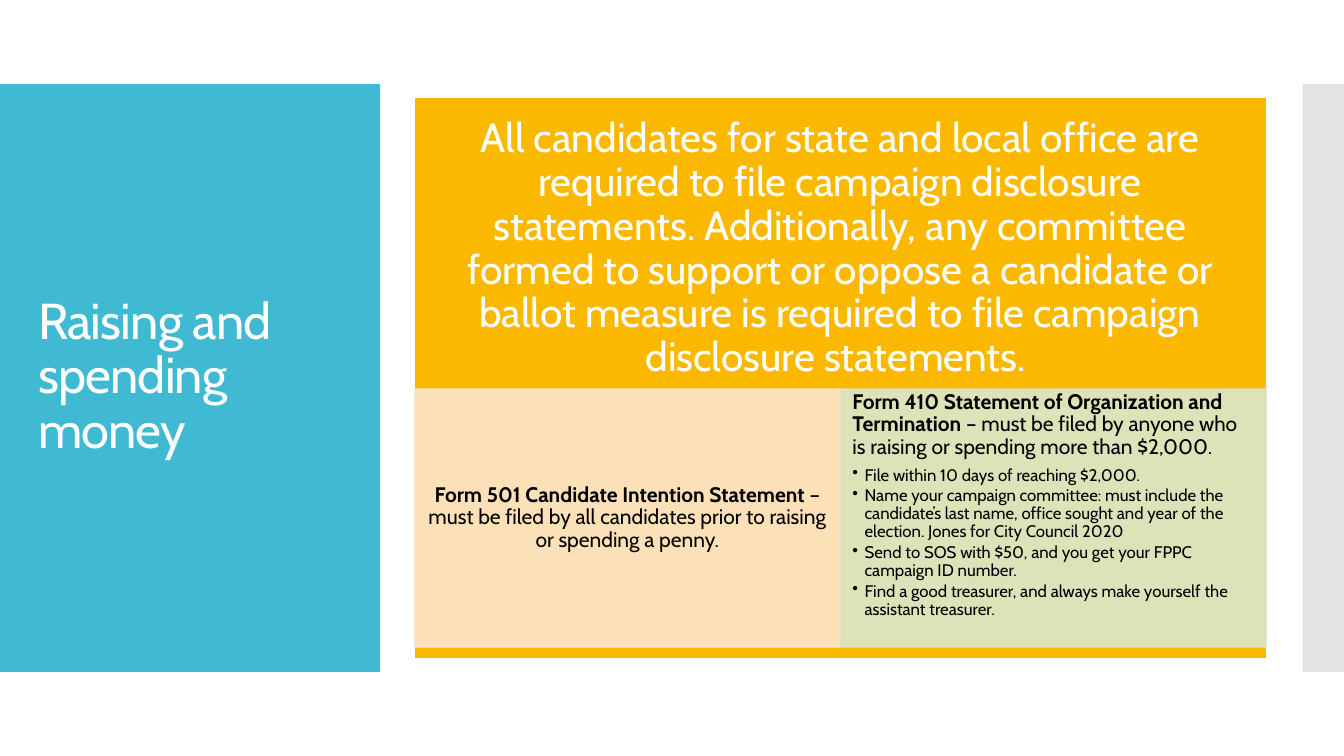
"""Build the slide on raising and spending campaign money."""
from lxml import etree
from pptx import Presentation
from pptx import util as u
from pptx.dml.color import RGBColor
from pptx.enum import shapes, text
from pptx.oxml.ns import qn

COLORS = {"teal": "40BAD2", "grey": "C8C8C8", "amber": "FAB900", "peach": "FDE6CC",
          "green": "DCE7CD", "white": "FFFFFF", "black": "000000"}
FONT = "Cabin"
WIDTH, HEIGHT = 13.33, 7.5
BAND_TOP, BAND_HEIGHT = HEIGHT / 9, HEIGHT * 7 / 9
PANEL_LEFT, PANEL_TOP, PANEL_WIDTH, PANEL_HEIGHT = 4.11, 0.97, 8.45, 5.56
FORM_TOP, FORM_WIDTH, FORM_HEIGHT = 3.86, PANEL_WIDTH / 2, 2.56

deck = Presentation()
deck.slide_width, deck.slide_height = u.Inches(WIDTH), u.Inches(HEIGHT)
page = deck.slides.add_slide(deck.slide_layouts[5])


def add_block(left, top, width, height, color, opacity=100, outline=None):
    """Add a flat rectangle, optionally outlined and see-through."""
    block = page.shapes.add_shape(shapes.MSO_SHAPE.RECTANGLE,
                                  *map(u.Inches, (left, top, width, height)))
    block.shadow.inherit = False
    block.fill.solid()
    block.fill.fore_color.rgb = RGBColor.from_string(COLORS[color])
    if outline:
        block.line.color.rgb = RGBColor.from_string(COLORS[outline])
        block.line.width = u.Pt(0.85)
    else:
        block.line.fill.background()
    if opacity < 100:
        for tint in block._element.spPr.iter(qn("a:srgbClr")):
            etree.SubElement(tint, qn("a:alpha"), val=str(opacity * 1000))
    return block


def style(para, size, color, align, after=0):
    """Format a paragraph and all its runs."""
    para.alignment = align
    para.line_spacing = 0.9
    para.space_after = u.Pt(after)
    for span in para.runs:
        span.font.name, span.font.size = FONT, u.Pt(size)
        span.font.color.rgb = RGBColor.from_string(COLORS[color])


add_block(0, BAND_TOP, 3.77, BAND_HEIGHT, "teal")
add_block(12.92, BAND_TOP, WIDTH - 12.92, BAND_HEIGHT, "grey", 50)

title = page.shapes.title
title.left, title.top, title.width, title.height = map(u.Inches, (0.28, 1.23, 3.22, 5.03))
title.text_frame.text = "Raising and spending money"
title.text_frame.auto_size = text.MSO_AUTO_SIZE.NONE
title.text_frame.vertical_anchor = text.MSO_ANCHOR.MIDDLE
style(title.text_frame.paragraphs[0], 36, "white", text.PP_ALIGN.LEFT)
title.text_frame.paragraphs[0].runs[0].font._element.set("spc", "-60")
page.shapes._spTree.append(title._element)

add_block(PANEL_LEFT, PANEL_TOP, PANEL_WIDTH, PANEL_HEIGHT, "amber", outline="white")
rule = page.shapes.add_textbox(*map(u.Inches, (PANEL_LEFT, PANEL_TOP, PANEL_WIDTH, 3)))
frame = rule.text_frame
frame.word_wrap = True
frame.vertical_anchor = text.MSO_ANCHOR.MIDDLE
frame.margin_left = frame.margin_right = frame.margin_top = frame.margin_bottom = u.Inches(0.23)
frame.text = ("All candidates for state and local office are required to file campaign "
              "disclosure statements. Additionally, any committee formed to support or oppose "
              "a candidate or ballot measure is required to file campaign disclosure "
              "statements. ")
style(frame.paragraphs[0], 29, "white", text.PP_ALIGN.CENTER)

forms = [
    ("peach", text.MSO_ANCHOR.MIDDLE, text.PP_ALIGN.CENTER,
     "Form 501 Candidate Intention Statement ",
     "– must be filed by all candidates prior to raising or spending a penny.", []),
    ("green", text.MSO_ANCHOR.TOP, text.PP_ALIGN.LEFT,
     "Form 410 Statement of Organization and Termination ",
     "– must be filed by anyone who is raising or spending more than $2,000.",
     ["File within 10 days of reaching $2,000.",
      "Name your campaign committee: must include the candidate’s last name, office sought "
      "and year of the election. Jones for City Council 2020",
      "Send to SOS with $50, and you get your FPPC campaign ID number.",
      "Find a good treasurer, and always make yourself the assistant treasurer."]),
]
for column, (color, anchor, align, name, duty, steps) in enumerate(forms):
    form = add_block(PANEL_LEFT + column * FORM_WIDTH, FORM_TOP, FORM_WIDTH, FORM_HEIGHT,
                     color, 90, color)
    frame = form.text_frame
    frame.word_wrap = True
    frame.vertical_anchor = anchor
    frame.margin_left = frame.margin_right = u.Inches(0.12)
    frame.margin_top = frame.margin_bottom = u.Inches(0.02)
    para = frame.paragraphs[0]
    for words, bold in ((name, True), (duty, False)):
        span = para.add_run()
        span.text, span.font.bold = words, bold
    style(para, 15, "black", align, 5.25)
    for step in steps:
        para = frame.add_paragraph()
        para.text, para.level = step, 1
        style(para, 12, "black", align, 1.8)
        props = para._p.get_or_add_pPr()
        props.set("marL", str(u.Inches(0.12)))
        props.set("indent", str(-u.Inches(0.12)))
        etree.SubElement(props, qn("a:buChar"), char="•")

deck.save("out.pptx")
